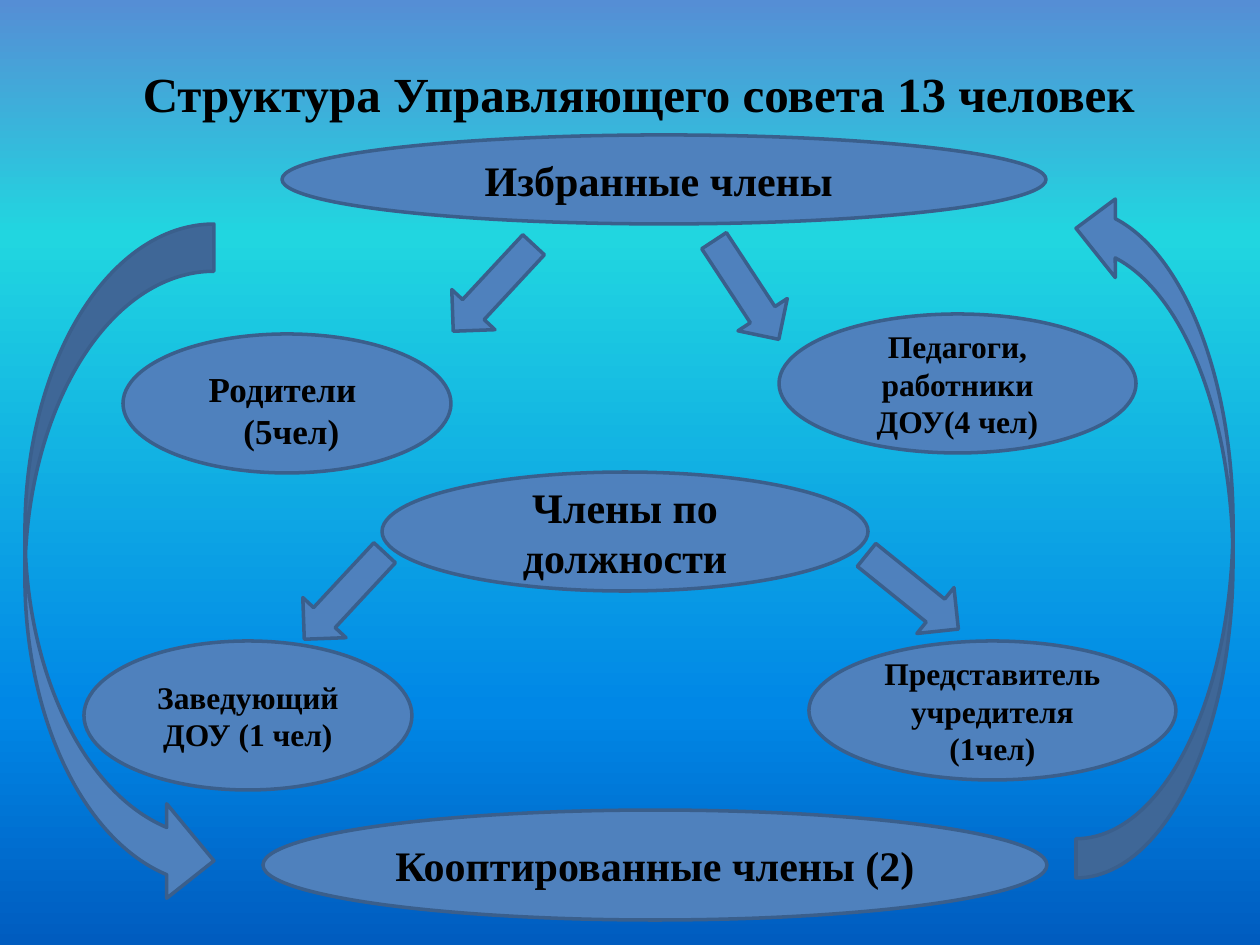
from copy import deepcopy
from dataclasses import dataclass

from pptx import Presentation
from pptx.dml.color import RGBColor
from pptx.enum.shapes import MSO_SHAPE
from pptx.enum.text import MSO_ANCHOR, PP_ALIGN
from pptx.oxml.ns import qn
from pptx.util import Emu, Pt


@dataclass(frozen=True)
class Theme:
    fill: str = "4F81BD"
    outline: str = "3A5F8C"
    text: str = "000000"
    background: tuple = ((0, "558ED5"), (0.25, "21D6E0"), (0.75, "0087E6"), (1, "005CBF"))
    font: str = "Times New Roman"
    spacer_font: str = "Calibri"
    spacer_size: int = 44
    title_size: int = 28
    group_size: int = 24
    parents_size: int = 20
    member_size: int = 18
    line_width: int = 2


THEME = Theme()
PX = 914400 / 126
SLIDE_SIZE = (1260, 945)
TITLE = "Структура Управляющего совета 13 человек"
TITLE_BOX = (63, 38, 1134, 87)
PARENTS_TOP_INSET = 18

ELLIPSES = [
    ((282, 135, 764, 89), ["Избранные члены "], THEME.group_size),
    ((263, 810, 784, 110), ["Кооптированные члены (2)"], THEME.group_size),
    ((123, 334, 328, 139), ["Родители ", " (5чел)"], THEME.parents_size),
    ((779, 314, 357, 139), ["Педагоги, работники ДОУ(4 чел)"], THEME.member_size),
    ((382, 472, 486, 119), ["Члены по должности"], THEME.group_size),
    ((84, 641, 328, 149), ["Заведующий ДОУ (1 чел)"], THEME.member_size),
    ((809, 641, 367, 139), ["Представитель учредителя (1чел)"], THEME.member_size),
]
CYCLE_ARROWS = [((25, 224, 189, 684), 0), ((1076, 189, 157, 689), 180)]
ARROW_SIZE = (59, 118)
BRANCH_ARROWS = [((464, 229), 42.9), ((717, 231), 326.7), ((315, 537), 42.9), ((883, 533), 308.9)]


def px(value):
    return Emu(round(value * PX))


def add_run(paragraph, text, size, font=THEME.font, bold=True):
    run = paragraph.add_run()
    run.text = text
    run.font.name = font
    run.font.size = Pt(size)
    run.font.bold = bold
    run.font.color.rgb = RGBColor.from_string(THEME.text)


def paint_background(slide):
    fill = slide.background.fill
    fill.gradient()
    fill.gradient_angle = 270
    stop_list = slide.element.find(".//" + qn("a:gsLst"))
    while len(stop_list) < len(THEME.background):
        stop_list.append(deepcopy(stop_list[0]))
    for stop, (position, color) in zip(fill.gradient_stops, THEME.background):
        stop.position = position
        stop.color.rgb = RGBColor.from_string(color)


def set_title(slide):
    title = slide.shapes.title
    title.left, title.top, title.width, title.height = map(px, TITLE_BOX)
    title.text_frame.vertical_anchor = MSO_ANCHOR.MIDDLE
    paragraph = title.text_frame.paragraphs[0]
    paragraph.alignment = PP_ALIGN.CENTER
    add_run(paragraph, " ", THEME.spacer_size, THEME.spacer_font, False)
    add_run(paragraph, TITLE, THEME.title_size)


def add_filled_shape(slide, kind, box, rotation=0):
    shape = slide.shapes.add_shape(kind, *map(px, box))
    shape.rotation = rotation
    shape.shadow.inherit = False
    shape.fill.solid()
    shape.fill.fore_color.rgb = RGBColor.from_string(THEME.fill)
    shape.line.color.rgb = RGBColor.from_string(THEME.outline)
    shape.line.width = Pt(THEME.line_width)
    return shape


def add_ellipse(slide, box, lines, size):
    frame = add_filled_shape(slide, MSO_SHAPE.OVAL, box).text_frame
    frame.word_wrap = True
    frame.vertical_anchor = MSO_ANCHOR.MIDDLE
    if len(lines) > 1:
        frame.margin_top = px(PARENTS_TOP_INSET)
    for index, line in enumerate(lines):
        paragraph = frame.add_paragraph() if index else frame.paragraphs[0]
        paragraph.alignment = PP_ALIGN.CENTER
        add_run(paragraph, line, size)


def main():
    presentation = Presentation()
    presentation.slide_width, presentation.slide_height = map(px, SLIDE_SIZE)
    slide = presentation.slides.add_slide(presentation.slide_layouts[5])
    paint_background(slide)
    set_title(slide)
    for box, lines, size in ELLIPSES:
        add_ellipse(slide, box, lines, size)
    for box, rotation in CYCLE_ARROWS:
        add_filled_shape(slide, MSO_SHAPE.CURVED_RIGHT_ARROW, box, rotation)
    for corner, rotation in BRANCH_ARROWS:
        add_filled_shape(slide, MSO_SHAPE.DOWN_ARROW, corner + ARROW_SIZE, rotation)
    presentation.save("out.pptx")


if __name__ == "__main__":
    main()
